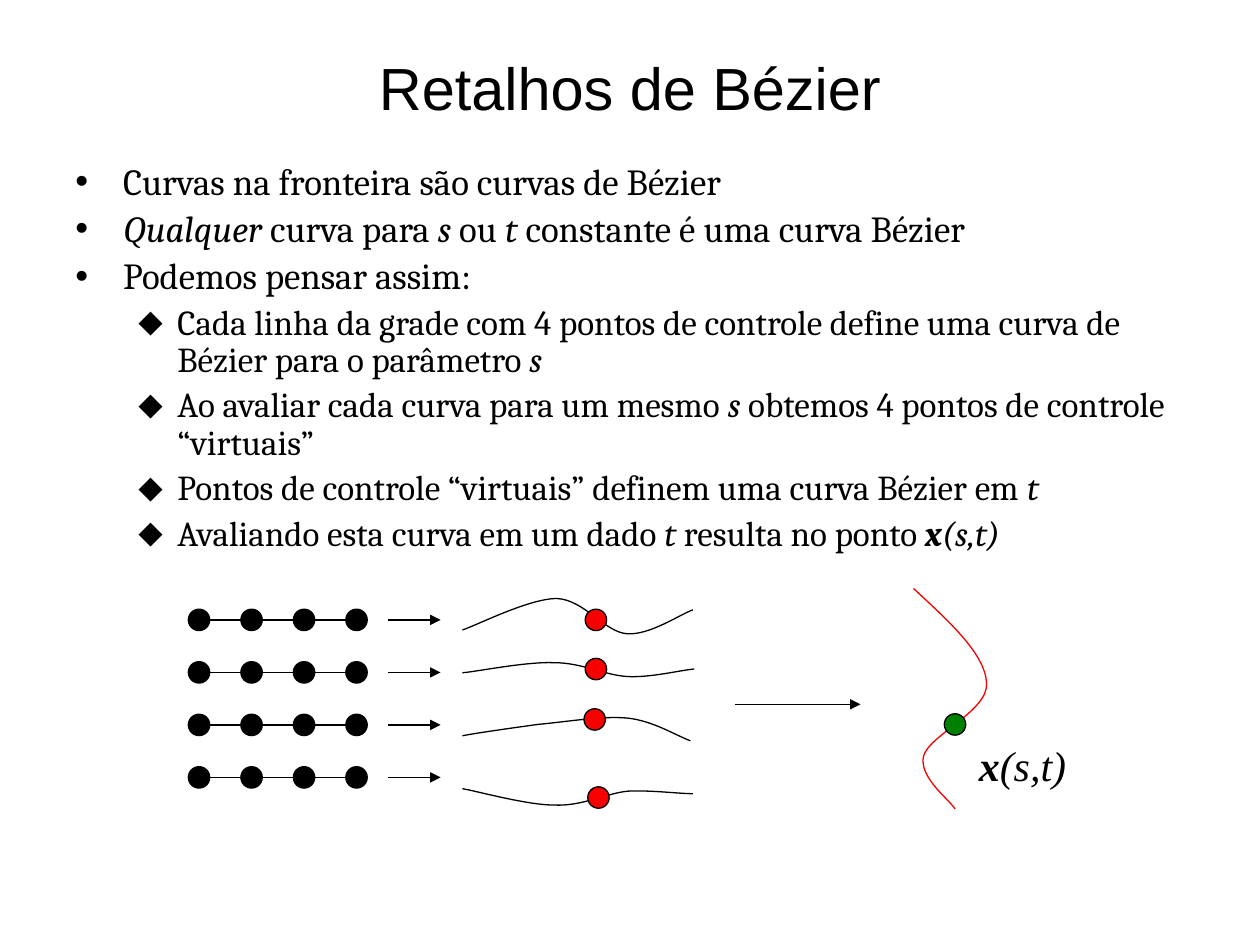
from lxml import etree
from pptx import Presentation
from pptx.dml.color import RGBColor
from pptx.enum.shapes import MSO_CONNECTOR, MSO_SHAPE
from pptx.enum.text import MSO_ANCHOR, PP_ALIGN
from pptx.oxml.ns import qn
from pptx.util import Inches, Pt

STRAIGHT = MSO_CONNECTOR.STRAIGHT
OVAL = MSO_SHAPE.OVAL
MIDDLE = MSO_ANCHOR.MIDDLE
CENTER = PP_ALIGN.CENTER

BLACK = RGBColor(0x00, 0x00, 0x00)
RED = RGBColor(0xF8, 0x00, 0x00)
GREEN = RGBColor(0x00, 0x80, 0x00)

THIN = Pt(0.75)
DOT = 0.17

# Text between asterisks is italic.
POINTS = [
    (0, "Curvas na fronteira são curvas de Bézier"),
    (0, "*Qualquer* curva para *s* ou *t* constante é uma curva Bézier"),
    (0, "Podemos pensar assim:"),
    (1, "Cada linha da grade com 4 pontos de controle define uma curva de "
        "Bézier para o parâmetro *s*"),
    (1, "Ao avaliar cada curva para um mesmo *s* obtemos 4 pontos de controle "
        "“virtuais”"),
    (1, "Pontos de controle “virtuais” definem uma curva Bézier em *t*"),
    (1, "Avaliando esta curva em um dado *t* resulta no ponto *x**(s,t)*"),
]
# Per level: size, indent, hanging part, bullet
LEVELS = [(21, 0.38, 0.38, "•"), (20, 0.81, 0.31, "⬥")]

# Control points of each row's curve, then the centre of its red dot
ROWS = [
    ([(0, 0.25), (0.12, 0.21), (0.53, 0), (0.75, 0), (0.97, 0.01),
      (1.13, 0.27), (1.31, 0.28), (1.49, 0.29), (1.72, 0.13), (1.83, 0.09)],
     (1.06, 0.17)),
    ([(0, 0.59), (0.12, 0.58), (0.51, 0.5), (0.73, 0.51), (0.95, 0.51),
      (1.13, 0.61), (1.31, 0.62), (1.49, 0.63), (1.73, 0.57), (1.84, 0.56)],
     (1.06, 0.56)),
    ([(0, 1.09), (0.1, 1.07), (0.38, 1.03), (0.6, 1), (0.82, 0.98),
      (1.11, 0.93), (1.31, 0.95), (1.51, 0.97), (1.7, 1.09), (1.81, 1.13)],
     (1.05, 0.96)),
    ([(0, 1.51), (0.12, 1.53), (0.51, 1.64), (0.73, 1.64), (0.95, 1.65),
      (1.13, 1.55), (1.31, 1.53), (1.49, 1.52), (1.72, 1.55), (1.83, 1.55)],
     (1.08, 1.58)),
]
FINAL = [(0, 0), (0.28, 0.26), (0.57, 0.52), (0.58, 0.75), (0.6, 0.97),
         (0.13, 1.16), (0.08, 1.33), (0.04, 1.5), (0.29, 1.68), (0.33, 1.75)]


def add_runs(para, text, size, font):
    for i, part in enumerate(text.split("*")):
        if part:
            run = para.add_run()
            run.text = part
            run.font.size, run.font.name = Pt(size), font
            run.font.color.rgb = BLACK
            run.font.italic = i % 2 == 1
            run.font.bold = part == "x"


def add_dot(slide, x, y, color):
    """Place a dot centred on (x, y)."""
    dot = slide.shapes.add_shape(OVAL, Inches(x - DOT / 2), Inches(y - DOT / 2),
                                 Inches(DOT), Inches(DOT))
    dot.shadow.inherit = False
    dot.fill.solid()
    dot.fill.fore_color.rgb = color
    dot.line.color.rgb = BLACK
    dot.line.width = THIN


def add_line(slide, x, y, width, arrow=False):
    line = slide.shapes.add_connector(STRAIGHT, Inches(x), Inches(y),
                                      Inches(x + width), Inches(y))
    line.line.color.rgb = BLACK
    line.line.width = THIN
    if arrow:
        etree.SubElement(line.line._get_or_add_ln(), qn("a:tailEnd"), type="triangle")
    etree.SubElement(line._element.spPr, qn("a:effectLst"))


def add_curve(slide, left, top, points, color):
    """Outline the control points, then turn each three sides into a cubic."""
    spots = [(Inches(left + x), Inches(top + y)) for x, y in points]
    pen = slide.shapes.build_freeform(*spots[0])
    pen.add_line_segments(spots[1:], close=False)
    curve = pen.convert_to_shape()
    sides = list(curve._element.iter(qn("a:lnTo")))
    track = sides[0].getparent()
    for k in range(0, len(sides), 3):
        cubic = etree.SubElement(track, qn("a:cubicBezTo"))
        for side in sides[k:k + 3]:
            cubic.append(side[0])
            track.remove(side)
    curve.shadow.inherit = False
    curve.fill.background()
    curve.line.color.rgb = color
    curve.line.width = THIN


def add_title(slide, left, top, width, height):
    title = slide.shapes.title
    title.left, title.top = Inches(left), Inches(top)
    title.width, title.height = Inches(width), Inches(height)
    frame = title.text_frame
    frame.vertical_anchor = MIDDLE
    frame.text = "Retalhos de Bézier"
    frame.paragraphs[0].alignment = CENTER
    font = frame.paragraphs[0].runs[0].font
    font.size, font.name = Pt(34), "Arial"
    font.color.rgb = BLACK


def add_list(slide, left, top, width, height):
    frame = slide.shapes.add_textbox(Inches(left), Inches(top), Inches(width),
                                     Inches(height)).text_frame
    frame.word_wrap = True
    for i, (level, text) in enumerate(POINTS):
        size, indent, hang, mark = LEVELS[level]
        para = frame.add_paragraph() if i else frame.paragraphs[0]
        para.level = level
        para.line_spacing = 0.9
        para.space_before = Pt(4.2)
        add_runs(para, text, size, "Cambria")
        props = para._p.get_or_add_pPr()
        props.set("marL", str(Inches(indent)))
        props.set("indent", str(-Inches(hang)))
        etree.SubElement(props, qn("a:buFont"), typeface="Arial")
        etree.SubElement(props, qn("a:buChar"), char=mark)


def add_grid(slide, left, top, side):
    """Four rows of four control points, each with an arrow to its curve."""
    gap = side / 3
    for row in range(4):
        y = top + row * gap
        add_line(slide, left, y, side)
        for col in range(4):
            add_dot(slide, left + col * gap, y, BLACK)
        add_line(slide, left + side + 0.25, y, gap, arrow=True)


def add_rows(slide, left, top):
    for points, (x, y) in ROWS:
        add_curve(slide, left, top, points, BLACK)
        add_dot(slide, left + x, top + y, RED)


def add_result(slide, left, top):
    add_curve(slide, left, top, FINAL, RED)
    add_dot(slide, left + 0.33, top + 1.08, GREEN)
    label = slide.shapes.add_textbox(Inches(left + 0.42), Inches(top + 1.15),
                                     Inches(0.9), Inches(0.5))
    label.text_frame.word_wrap = False
    add_runs(label.text_frame.paragraphs[0], "*x**(s,t)*", 24, "Times New Roman")


def main():
    deck = Presentation()
    deck.slide_width, deck.slide_height = Inches(10), Inches(7.5)
    slide = deck.slides.add_slide(deck.slide_layouts[5])
    add_title(slide, 0.5, 0.3, 9, 0.78)
    add_list(slide, 0.5, 1.25, 9, 3.41)
    add_grid(slide, 1.58, 4.92, 1.25)
    add_rows(slide, 3.67, 4.75)
    add_line(slide, 5.83, 5.59, 1, arrow=True)
    add_result(slide, 7.25, 4.67)
    deck.save("out.pptx")


if __name__ == "__main__":
    main()
